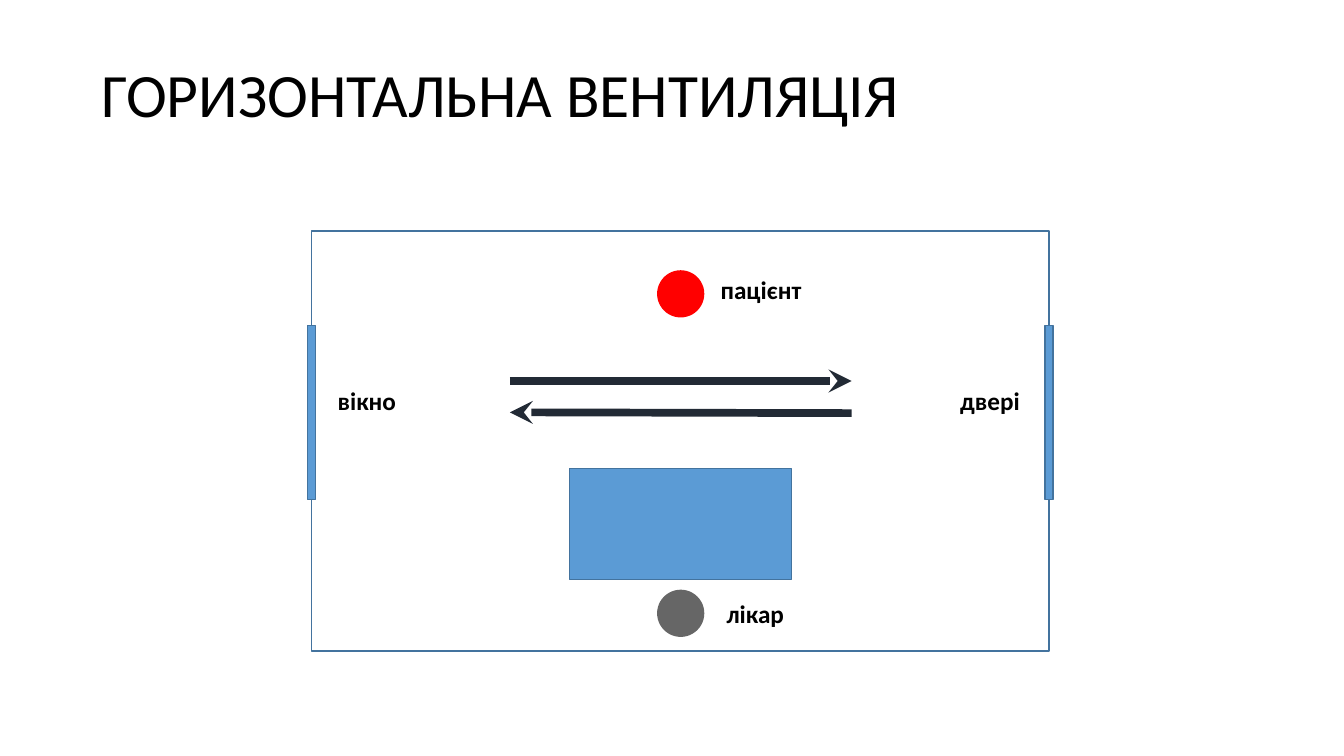
from typing import NamedTuple, Optional

from lxml.etree import SubElement
from pptx import Presentation
from pptx.dml.color import RGBColor
from pptx.enum.shapes import MSO_CONNECTOR as Link, MSO_SHAPE as Kind
from pptx.enum.text import MSO_ANCHOR as Anchor, MSO_AUTO_SIZE as Fit, PP_ALIGN as Align
from pptx.oxml.ns import qn
from pptx.util import Cm, Pt

BLUE, EDGE, DARK = "5B9BD5", "43739E", "222A35"
RED, GREY, BLACK = "FF0000", "666666", "000000"


class Part(NamedTuple):
    x: float
    y: float
    w: float
    h: float
    fill: Optional[str] = BLUE
    edge: Optional[str] = EDGE
    kind: Kind = Kind.RECTANGLE
    turn: int = 0


class Flow(NamedTuple):
    x1: float
    y1: float
    x2: float
    y2: float


class Label(NamedTuple):
    text: str
    x: float
    y: float
    w: float


def paint(target, color: str) -> None:
    target.rgb = RGBColor.from_string(color)


def write(frame, text: str, *, size: float, bold: bool = False, color: str = BLACK,
          wrap: bool = True, fit: Fit = Fit.NONE, anchor: Anchor = Anchor.TOP) -> None:
    frame.word_wrap = wrap
    frame.auto_size = fit
    frame.vertical_anchor = anchor
    para = frame.paragraphs[0]
    para.alignment = Align.LEFT
    run = para.add_run()
    run.text = text
    run.font.name = "Calibri"
    run.font.size = Pt(size)
    run.font.bold = bold
    paint(run.font.color, color)


def draw_part(slide, part: Part) -> None:
    shape = slide.shapes.add_shape(part.kind, Cm(part.x), Cm(part.y), Cm(part.w), Cm(part.h))
    shape.shadow.inherit = False
    shape.rotation = part.turn
    if part.fill:
        shape.fill.solid()
        paint(shape.fill.fore_color, part.fill)
    else:
        shape.fill.background()
    if part.edge:
        paint(shape.line.color, part.edge)
        shape.line.width = Pt(1)
    else:
        shape.line.fill.background()


def draw_flow(slide, flow: Flow) -> None:
    link = slide.shapes.add_connector(Link.STRAIGHT, *(Cm(v) for v in flow))
    paint(link.line.color, DARK)
    link.line.width = Pt(5.5)
    SubElement(link.line._get_or_add_ln(), qn("a:tailEnd"), type="stealth")
    SubElement(link._element.spPr, qn("a:effectLst"))


def draw_label(slide, label: Label) -> None:
    box = slide.shapes.add_textbox(Cm(label.x), Cm(label.y), Cm(label.w), Cm(1.02))
    write(box.text_frame, label.text, size=18, bold=True, wrap=False,
          fit=Fit.SHAPE_TO_FIT_TEXT)


# Room plan: desk, walls, people, window and door
WALL, TOP, WIDE = 7.85, 5.82, 18.59
SLIM, DOT, SEAT = 0.2, 1.19, 16.56
PARTS = [
    Part(15.75, 10.41, 2.79, 5.59, turn=90),
    Part(WALL, TOP, WIDE, 10.59, fill=None),
    *(Part(SEAT, y, DOT, DOT, fill, None, Kind.OVAL)
      for y, fill in ((6.81, RED), (14.86, GREY))),
    *(Part(x - SLIM / 2, 8.2, SLIM, 4.39) for x in (WALL, WALL + WIDE)),
]

# Air moves both ways between window and door
FLOWS = [Flow(12.85, 9.6, 21.46, 9.6), Flow(21.46, 10.41, 12.85, 10.39)]

LABELS = [
    Label("пацієнт", 17.91, 6.78, 2.9),
    Label("лікар", 18.06, 14.94, 2.16),
    Label("вікно", 8.26, 9.58, 2.18),
    Label("двері", 23.95, 9.58, 2.24),
]


def main() -> None:
    deck = Presentation()
    deck.slide_width, deck.slide_height = Cm(33.87), Cm(19.05)
    slide = deck.slides.add_slide(deck.slide_layouts[5])

    # Title
    title = slide.shapes.title
    title.left, title.top, title.width, title.height = Cm(2.31), Cm(1.65), Cm(27.48), Cm(1.37)
    write(title.text_frame, "ГОРИЗОНТАЛЬНА ВЕНТИЛЯЦІЯ", size=44, anchor=Anchor.MIDDLE)

    # Plan
    for part in PARTS:
        draw_part(slide, part)
    for flow in FLOWS:
        draw_flow(slide, flow)
    for label in LABELS:
        draw_label(slide, label)

    deck.save("out.pptx")


if __name__ == "__main__":
    main()
